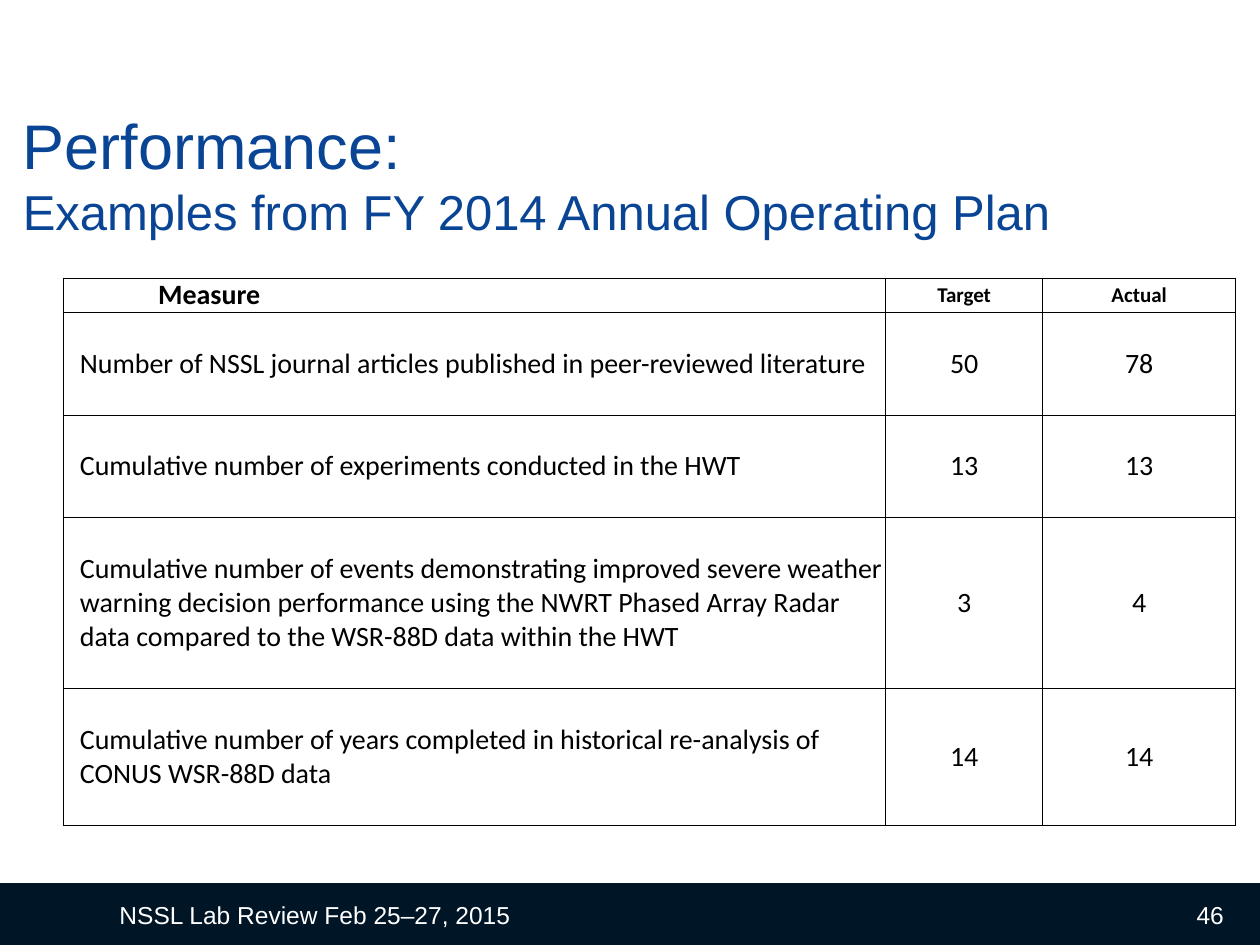
import pptx
import pptx.dml.color
import pptx.enum.shapes
import pptx.enum.text
import pptx.oxml
import pptx.util

Pt = pptx.util.Pt
ALIGN = pptx.enum.text.PP_ALIGN
ANCHOR = pptx.enum.text.MSO_ANCHOR
BORDER = (
    '<a:{0} xmlns:a="http://schemas.openxmlformats.org/drawingml/2006/main" w="6350">'
    '<a:solidFill><a:srgbClr val="000000"/></a:solidFill></a:{0}>'
)


def rgb(value):
    return pptx.dml.color.RGBColor.from_string(value)


def style(run, name, size, color, bold=False):
    run.font.name = name
    run.font.size = Pt(size)
    run.font.bold = bold
    run.font.color.rgb = rgb(color)


deck = pptx.Presentation()
deck.slide_width, deck.slide_height = Pt(720), Pt(540)
slide = deck.slides.add_slide(deck.slide_layouts[5])

# Footer bar
bar = slide.shapes.add_shape(
    pptx.enum.shapes.MSO_SHAPE.RECTANGLE, Pt(0), Pt(504.7), Pt(720), Pt(35.3))
bar.shadow.inherit = False
bar.fill.solid()
bar.fill.fore_color.rgb = rgb("001526")
bar.line.fill.background()

# Title
title = slide.shapes.title
title.left, title.top, title.width, title.height = Pt(5.8), Pt(67.7), Pt(720), Pt(73.4)
heading = title.text_frame
heading.auto_size = pptx.enum.text.MSO_AUTO_SIZE.NONE
heading.vertical_anchor = ANCHOR.BOTTOM
heading.text = "Performance: \vExamples from FY 2014 Annual Operating Plan"
heading.paragraphs[0].alignment = ALIGN.LEFT
for run, size in zip(heading.paragraphs[0].runs, (36, 28)):
    style(run, "Arial", size, "0A4595")

# Footer text and page number
for text, left, width, alignment in (
    ("NSSL Lab Review Feb 25–27, 2015", 61.2, 329, ALIGN.LEFT),
    ("46", 538.6, 167.8, ALIGN.RIGHT),
):
    footer = slide.shapes.add_textbox(Pt(left), Pt(508.3), Pt(width), Pt(28.8)).text_frame
    footer.word_wrap = True
    footer.vertical_anchor = ANCHOR.MIDDLE
    footer.text = text
    footer.paragraphs[0].alignment = alignment
    style(footer.paragraphs[0].runs[0], "Arial", 14, "FFFFFF")

# Performance measures
measures = [
    ("Measure", "Target", "Actual"),
    ("Number of NSSL journal articles published in peer-reviewed literature", "50", "78"),
    ("Cumulative number of experiments conducted in the HWT", "13", "13"),
    ("Cumulative number of events demonstrating improved severe weather warning "
     "decision performance using the NWRT Phased Array Radar data compared to the "
     "WSR-88D data within the HWT", "3", "4"),
    ("Cumulative number of years completed in historical re-analysis of "
     "CONUS WSR-88D data", "14", "14"),
]
column_widths = (469.7, 89.8, 110.3)
row_heights = (19.6, 58.6, 58.6, 97.6, 78.2)
table = slide.shapes.add_table(
    len(measures), len(column_widths), Pt(36.4), Pt(158.9),
    Pt(sum(column_widths)), Pt(sum(row_heights))).table
for column, width in zip(table.columns, column_widths):
    column.width = Pt(width)
for row, height in zip(table.rows, row_heights):
    row.height = Pt(height)

for row_index, measure in enumerate(measures):
    is_header = row_index == 0
    for column_index, text in enumerate(measure):
        is_label = column_index == 0
        cell = table.cell(row_index, column_index)
        cell.margin_left = cell.margin_right = cell.margin_top = cell.margin_bottom = 0
        if is_label:
            cell.margin_left = Pt(54) if is_header else Pt(9.3)
        cell.vertical_anchor = ANCHOR.MIDDLE
        cell.text = text
        paragraph = cell.text_frame.paragraphs[0]
        paragraph.alignment = ALIGN.LEFT if is_label else ALIGN.CENTER
        size = 12 if is_header and not is_label else 16
        style(paragraph.runs[0], "Calibri", size, "000000", is_header)
        # Borders come before the fill in the cell properties
        properties = cell._tc.get_or_add_tcPr()
        for side in ("lnL", "lnR", "lnT", "lnB"):
            properties.append(pptx.oxml.parse_xml(BORDER.format(side)))
        cell.fill.background()

deck.save("out.pptx")
